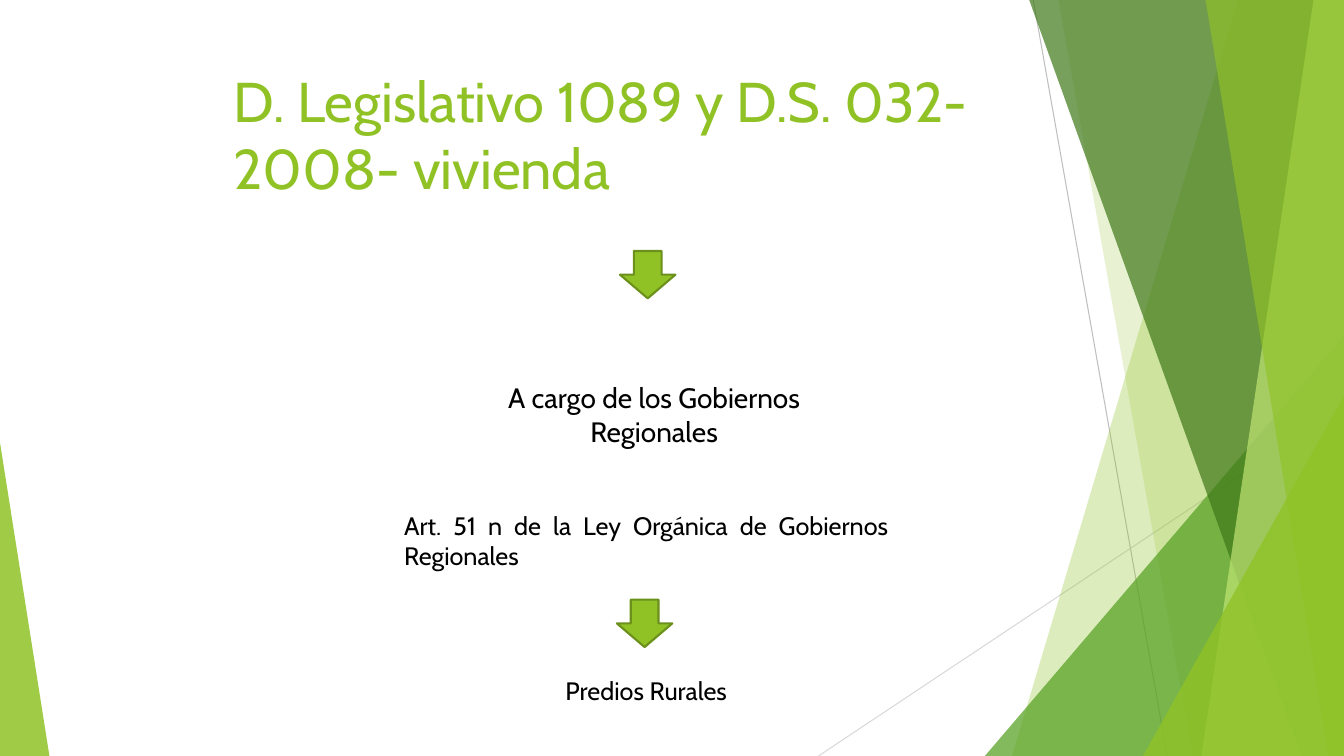
from lxml import etree
from pptx import Presentation
from pptx.dml.color import RGBColor
from pptx.enum.shapes import MSO_CONNECTOR, MSO_SHAPE
from pptx.enum.text import MSO_ANCHOR, PP_ALIGN
from pptx.oxml.ns import qn
from pptx.util import Inches, Pt

STRAIGHT = MSO_CONNECTOR.STRAIGHT
TRIANGLE, DOWN_ARROW = MSO_SHAPE.ISOSCELES_TRIANGLE, MSO_SHAPE.DOWN_ARROW
TOP, MIDDLE = MSO_ANCHOR.TOP, MSO_ANCHOR.MIDDLE
LEFT, CENTER, JUSTIFY = PP_ALIGN.LEFT, PP_ALIGN.CENTER, PP_ALIGN.JUSTIFY

WIDTH, HEIGHT = Inches(13.33), Inches(7.5)
FONT = "Cabin"
COLORS = {
    "lime": "90C226",
    "green": "54A021",
    "forest": "3F7819",
    "pale": "C0E474",
    "outline": "6B901C",
    "gray": "BFBFBF",
    "light_gray": "D9D9D9",
    "black": "000000",
}


def rgb(name):
    return RGBColor.from_string(COLORS[name])


def across(percent):
    return round(WIDTH * percent / 100)


def down(percent):
    return round(HEIGHT * percent / 100)


def box(left, top, width, height):
    """Turn percentages of the slide into a position and a size."""
    return across(left), down(top), across(width), down(height)


def paint(shape, color, opacity=100):
    shape.shadow.inherit = False
    shape.fill.solid()
    shape.fill.fore_color.rgb = rgb(color)
    shape.line.fill.background()
    if opacity < 100:
        color_element = shape._element.spPr.find(qn("a:solidFill"))[0]
        alpha = etree.SubElement(color_element, qn("a:alpha"))
        alpha.set("val", str(opacity * 1000))


def add_thin_line(slide, start, end, color):
    line = slide.shapes.add_connector(
        STRAIGHT, across(start[0]), down(start[1]), across(end[0]), down(end[1]))
    line.line.color.rgb = rgb(color)
    line.line.width = Pt(0.75)
    etree.SubElement(line._element.spPr, qn("a:effectLst"))


def add_facet(slide, top_left, bottom_left, color, opacity):
    """Fill the full-height area between a slanted edge and the slide's right side."""
    builder = slide.shapes.build_freeform(across(top_left), 0)
    builder.add_line_segments(
        [(WIDTH, 0), (WIDTH, HEIGHT), (across(bottom_left), HEIGHT)], close=True)
    paint(builder.convert_to_shape(), color, opacity)


def add_corner(slide, left, top, width, apex, color, opacity):
    """Add a triangle that stands on the bottom of the slide."""
    triangle = slide.shapes.add_shape(TRIANGLE, *box(left, top, width, 100 - top))
    triangle.adjustments[0] = apex
    paint(triangle, color, opacity)


def add_down_arrow(slide, left, top):
    arrow = slide.shapes.add_shape(DOWN_ARROW, *box(left, top, 4.13, 6.27))
    paint(arrow, "lime")
    arrow.line.color.rgb = rgb("outline")
    arrow.line.width = Pt(1.5)


def add_text(slide, text, place, size, align=CENTER, anchor=TOP, color="black"):
    text_frame = slide.shapes.add_textbox(*box(*place)).text_frame
    text_frame.word_wrap = True
    text_frame.vertical_anchor = anchor
    text_frame.text = text
    paragraph = text_frame.paragraphs[0]
    paragraph.alignment = align
    font = paragraph.runs[0].font
    font.name, font.size = FONT, Pt(size)
    font.color.rgb = rgb(color)


def add_backdrop(slide):
    add_thin_line(slide, (76.88, 0), (86.85, 100), "gray")
    add_thin_line(slide, (100, 53.73), (60.9, 100), "light_gray")
    add_facet(slide, 92.1, 75.3, "lime", 30)
    add_facet(slide, 78.75, 88.73, "lime", 20)
    add_corner(slide, 73.28, 44.4, 26.72, 1, "green", 72)
    add_facet(slide, 76.58, 96.83, "forest", 70)
    add_facet(slide, 97.73, 89.4, "pale", 70)
    add_facet(slide, 89.7, 98.85, "lime", 65)
    add_corner(slide, 85.05, 52.4, 14.95, 1, "lime", 80)
    add_corner(slide, 0, 58.53, 3.68, 0, "lime", 85)


def main():
    presentation = Presentation()
    presentation.slide_width, presentation.slide_height = WIDTH, HEIGHT
    slide = presentation.slides.add_slide(presentation.slide_layouts[6])
    add_backdrop(slide)
    add_text(slide, "D. Legislativo 1089 y D.S. 032-2008- vivienda",
             (16.65, 8.13, 60.53, 19.87), 40, LEFT, color="lime")
    add_down_arrow(slide, 46.13, 33.2)
    add_text(slide, "A cargo de los Gobiernos Regionales",
             (35.7, 45.33, 25.95, 18.93), 20, anchor=MIDDLE)
    add_text(slide, "Art. 51 n de la Ley Orgánica de Gobiernos Regionales",
             (29.33, 66.8, 37.5, 9.47), 18, JUSTIFY)
    add_down_arrow(slide, 45.9, 79.33)
    add_text(slide, "Predios Rurales", (29.33, 88.67, 37.5, 5.33), 18)
    presentation.save("out.pptx")


if __name__ == "__main__":
    main()
